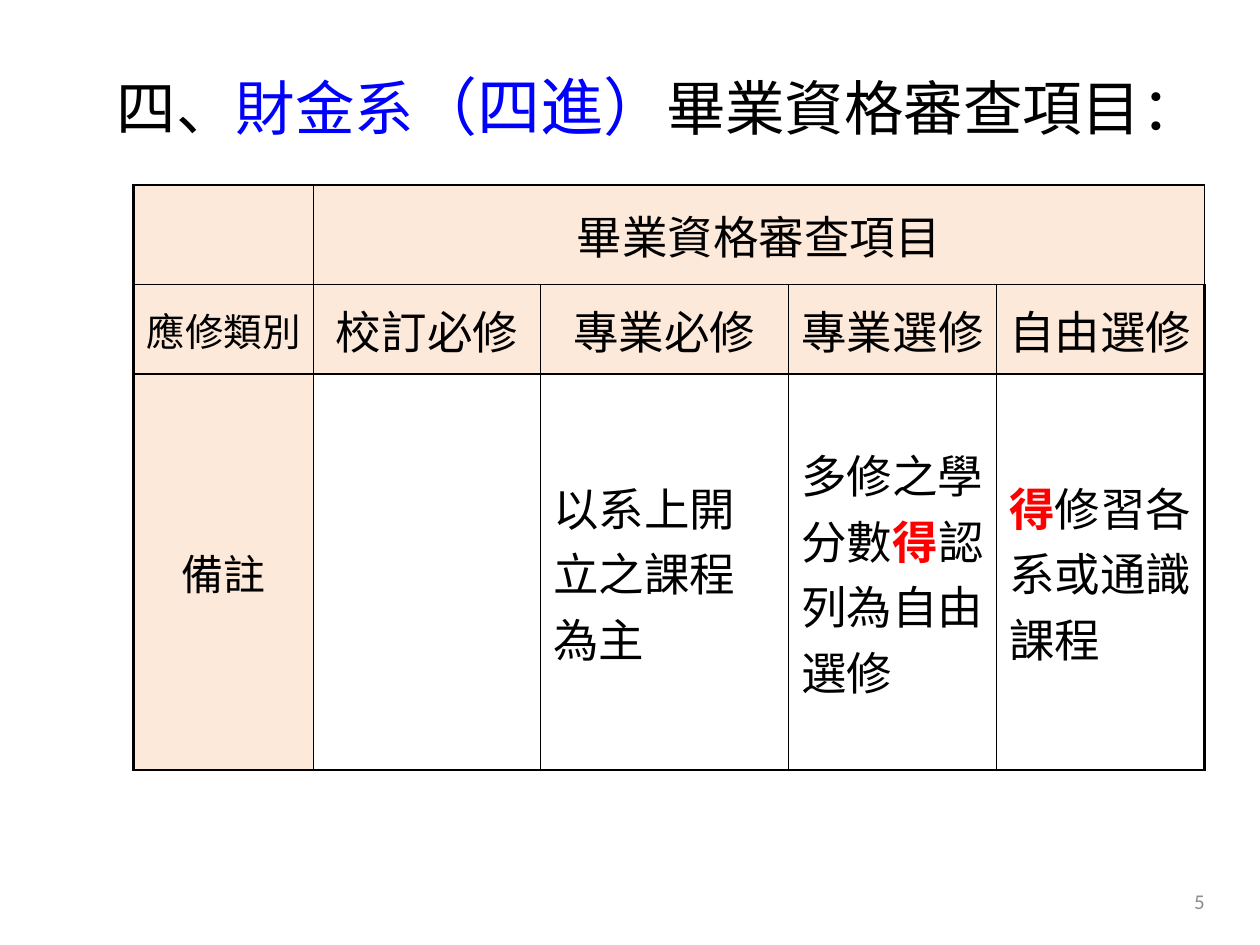
from lxml.etree import SubElement
from pptx import Presentation
from pptx.dml.color import RGBColor
from pptx.enum.text import MSO_ANCHOR as Anchor, PP_ALIGN as Align
from pptx.oxml.ns import qn
from pptx.util import Inches, Pt

BLACK = RGBColor(0x00, 0x00, 0x00)
BLUE = RGBColor(0x00, 0x00, 0xFF)
RED = RGBColor(0xFF, 0x00, 0x00)
GRAY = RGBColor(0x8C, 0x8C, 0x8C)
PEACH = RGBColor(0xFD, 0xE9, 0xD9)
CJK = "Noto Sans CJK JP"
SERIF = "Times New Roman"

COLUMN_WIDTHS = [1.43, 1.8, 1.97, 1.65, 1.65]
ROW_HEIGHTS = [0.79, 0.71, 3.14]
CATEGORIES = ["校訂必修", "專業必修", "專業選修", "自由選修"]
REMARKS = [
    [],
    [("以系上開立之課程為主", {})],
    [("多修之學分數", {}), ("得", {"color": RED, "bold": True}), ("認列為自由選修", {})],
    [("得", {"color": RED, "bold": True}), ("修習各系或通識課程", {})],
]


def add_text(paragraph, text, size=26, color=BLACK, bold=False, font=SERIF):
    run = paragraph.add_run()
    run.text = text
    run.font.size = Pt(size)
    run.font.bold = bold
    run.font.color.rgb = color
    run.font.name = font
    SubElement(run.font._element, qn("a:ea"), typeface=CJK)


class SlideBuilder:
    def __init__(self, slide):
        self.slide = slide

    def text(self, left, top, width, height, runs, align=Align.LEFT):
        frame = self.slide.shapes.add_textbox(
            Inches(left), Inches(top), Inches(width), Inches(height)
        ).text_frame
        frame.word_wrap = True
        frame.vertical_anchor = Anchor.MIDDLE
        paragraph = frame.paragraphs[0]
        paragraph.alignment = align
        for words, style in runs:
            add_text(paragraph, words, **style)

    def table(self, left, top, widths, heights):
        table = self.slide.shapes.add_table(
            len(heights), len(widths), Inches(left), Inches(top),
            Inches(sum(widths)), Inches(sum(heights)),
        ).table
        table.first_row = table.horz_banding = False
        for column, width in zip(table.columns, widths):
            column.width = Inches(width)
        for row, height in zip(table.rows, heights):
            row.height = Inches(height)
        last_row, last_column = len(heights) - 1, len(widths) - 1
        for r in range(len(heights)):
            for c in range(len(widths)):
                cell = table.cell(r, c)
                outer = {"L": c == 0, "R": c == last_column, "T": r == 0, "B": r == last_row}
                self.borders(cell, outer)
                if r < last_row or c == 0:
                    cell.fill.solid()
                    cell.fill.fore_color.rgb = PEACH
                else:
                    cell.fill.background()
        return table

    def borders(self, cell, outer):
        properties = cell._tc.get_or_add_tcPr()
        for side, is_outer in outer.items():
            width = Pt(1.5 if is_outer else 1)
            line = SubElement(properties, qn(f"a:ln{side}"), w=str(int(width)))
            fill = SubElement(line, qn("a:solidFill"))
            SubElement(fill, qn("a:srgbClr"), val=str(BLACK))

    def cell(self, cell, runs, align=Align.CENTER):
        cell.vertical_anchor = Anchor.MIDDLE
        paragraph = cell.text_frame.paragraphs[0]
        paragraph.alignment = align
        for words, style in runs:
            add_text(paragraph, words, **style)


def main():
    deck = Presentation()
    deck.slide_width, deck.slide_height = Inches(10), Inches(7.5)
    builder = SlideBuilder(deck.slides.add_slide(deck.slide_layouts[6]))

    page_number = [("5", {"size": 12, "color": GRAY, "font": "Calibri"})]
    builder.text(7.33, 6.95, 2.33, 0.4, page_number, align=Align.RIGHT)

    review = builder.table(1.06, 1.47, COLUMN_WIDTHS, ROW_HEIGHTS)
    review.cell(0, 1).merge(review.cell(0, 4))
    builder.cell(review.cell(0, 1), [("畢業資格審查項目", {})])
    builder.cell(review.cell(1, 0), [("應修類別", {"size": 22})])
    builder.cell(review.cell(2, 0), [("備註", {"size": 24})])
    for column, (category, remark) in enumerate(zip(CATEGORIES, REMARKS), start=1):
        builder.cell(review.cell(1, column), [(category, {})])
        builder.cell(review.cell(2, column), remark, align=Align.LEFT)

    heading = [
        ("四、", {"size": 34, "font": CJK}),
        ("財金系", {"size": 34, "color": BLUE, "font": CJK}),
        ("（四進）", {"size": 36, "color": BLUE, "font": CJK}),
        ("畢業資格審查項目：", {"size": 34, "font": CJK}),
    ]
    builder.text(0.83, 0.29, 8.83, 1.09, heading)

    deck.save("out.pptx")


if __name__ == "__main__":
    main()
